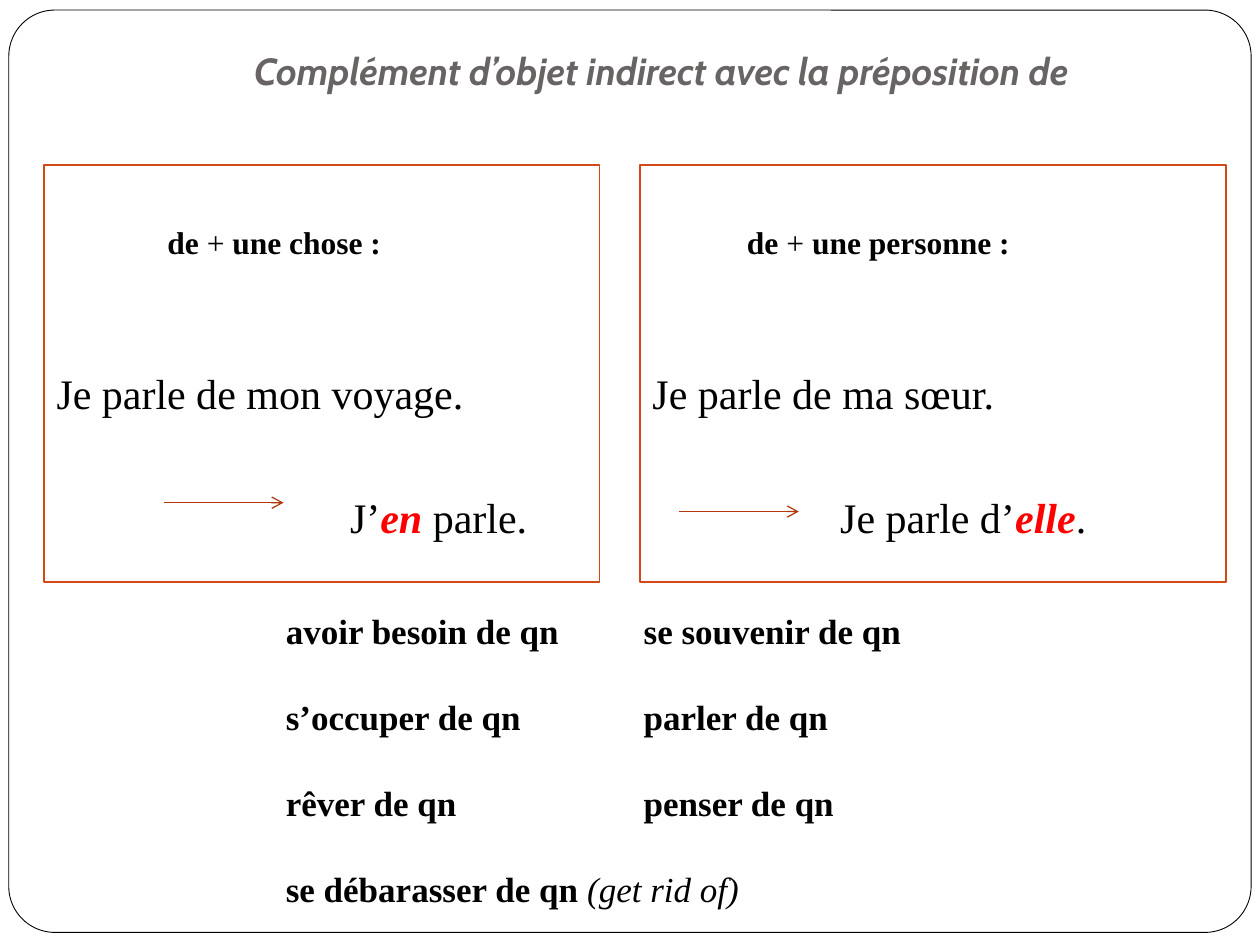
"""Build a slide on French indirect objects with the preposition de."""
from lxml.etree import SubElement
from pptx import Presentation
from pptx.dml.color import RGBColor
from pptx.enum.shapes import MSO_CONNECTOR, MSO_SHAPE
from pptx.enum.text import MSO_ANCHOR, PP_ALIGN
from pptx.oxml.ns import qn
from pptx.util import Inches, Pt

BLACK = RGBColor(0, 0, 0)
WHITE = RGBColor(255, 255, 255)
GREY = RGBColor(0x69, 0x64, 0x64)
ORANGE = RGBColor(0xD3, 0x48, 0x17)
RUST = RGBColor(0xB1, 0x36, 0x0B)
RED = RGBColor(255, 0, 0)
SERIF = "Times New Roman"

TITLE = "Complément d’objet indirect avec la préposition de"
BOXES = [
    {"left": 0.35, "width": 4.41, "arrow": (1.3, 3.99),
     "lines": [(0.88, ["*de ", "+", "* une chose :"]),
               (0, ["Je parle de mon voyage."]),
               (2.33, ["J’", "!en", " parle."])]},
    {"left": 5.08, "width": 4.65, "arrow": (5.39, 4.06),
     "lines": [(0.75, ["*de ", "+ ", "*une personne :"]),
               (0, ["Je parle de ma sœur."]),
               (1.49, ["Je parle d’", "!elle", "."])]},
]
STYLES = [(18, 0), (24, 61), (24, 42)]
VERBS = [
    ["*avoir besoin de qn\tse souvenir de qn"],
    ["*s’occuper de qn\tparler de qn"],
    ["*rêver de qn\tpenser de qn"],
    ["*se débarasser de qn ", "/(get rid of)"],
]
TOP, HEIGHT, ARROW = 1.31, 3.31, 0.95


def add_shape(slide, kind, box, line, width):
    shape = slide.shapes.add_shape(kind, *map(Inches, box))
    shape.shadow.inherit = False
    shape.fill.background()
    shape.line.color.rgb = line
    shape.line.width = Pt(width)
    return shape


def add_text(slide, box):
    frame = slide.shapes.add_textbox(*map(Inches, box)).text_frame
    frame.word_wrap = True
    return frame


def write(par, parts, size, before):
    par.alignment = PP_ALIGN.LEFT
    par.space_before = Pt(before)
    par.font.name, par.font.size = SERIF, Pt(size)
    par.font.color.rgb = BLACK
    for part in parts:
        mark = part[0] if part[0] in "*!/" else ""
        run = par.add_run()
        run.text = part[len(mark):]
        run.font.name, run.font.size = SERIF, Pt(size)
        run.font.bold = mark in ("*", "!")
        run.font.italic = mark in ("/", "!")
        run.font.color.rgb = RED if mark == "!" else BLACK


def next_par(frame, index):
    return frame.add_paragraph() if index else frame.paragraphs[0]


def add_box(slide, left, width, arrow, lines):
    shape = add_shape(slide, MSO_SHAPE.RECTANGLE,
                      (left, TOP, width, HEIGHT), ORANGE, 0.75)
    frame = shape.text_frame
    frame.word_wrap = True
    frame.vertical_anchor = MSO_ANCHOR.TOP
    frame.margin_top = Inches(0.46)
    for i, ((indent, parts), style) in enumerate(zip(lines, STYLES)):
        par = next_par(frame, i)
        write(par, parts, *style)
        par._p.get_or_add_pPr().set("marL", str(Inches(indent)))
    x, y = arrow
    line = slide.shapes.add_connector(
        MSO_CONNECTOR.STRAIGHT, *map(Inches, (x, y, x + ARROW, y)))
    line.line.color.rgb = RUST
    line.line.width = Pt(0.75)
    SubElement(line.line._get_or_add_ln(), qn("a:tailEnd"), type="arrow")
    SubElement(line._element.spPr, qn("a:effectLst"))


def add_title(slide):
    frame = add_text(slide, (1, 0.3, 8.5, 0.54))
    frame.vertical_anchor = MSO_ANCHOR.BOTTOM
    frame.margin_bottom = Inches(0.1)
    par = frame.paragraphs[0]
    par.text, par.alignment = TITLE, PP_ALIGN.CENTER
    font = par.font
    font.name, font.size = "Cabin", Pt(21.6)
    font.bold = font.italic = True
    font.color.rgb = GREY


def add_verbs(slide):
    frame = add_text(slide, (2.17, 4.79, 6.14, 2.5))
    for i, parts in enumerate(VERBS):
        par = next_par(frame, i)
        write(par, parts, 20, 25 if i else 0)
        tabs = par._p.get_or_add_pPr().find(qn("a:tabLst"))
        if tabs is None:
            tabs = par._p.pPr.makeelement(qn("a:tabLst"))
            par._p.pPr.find(qn("a:defRPr")).addprevious(tabs)
        SubElement(tabs, qn("a:tab"), pos=str(Inches(2.84)), algn="l")


def main():
    deck = Presentation()
    deck.slide_width, deck.slide_height = Inches(10), Inches(7.5)
    slide = deck.slides.add_slide(deck.slide_layouts[6])
    frame = add_shape(slide, MSO_SHAPE.ROUNDED_RECTANGLE,
                      (0.07, 0.08, 9.86, 7.32), BLACK, 0.5)
    frame.adjustments[0] = 0.05
    frame.fill.solid()
    frame.fill.fore_color.rgb = WHITE
    add_title(slide)
    for box in BOXES:
        add_box(slide, **box)
    add_verbs(slide)
    deck.save("out.pptx")


if __name__ == "__main__":
    main()
